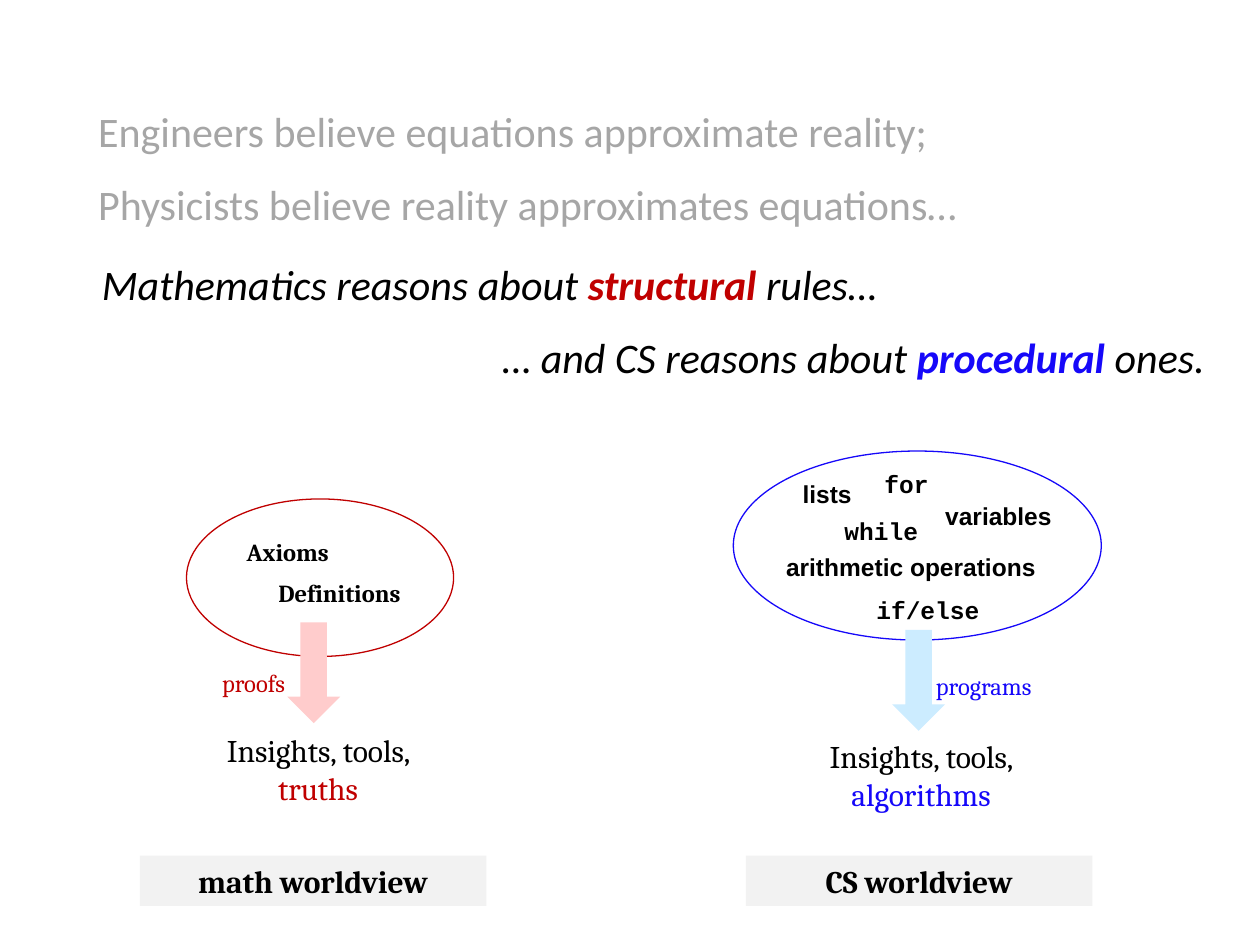
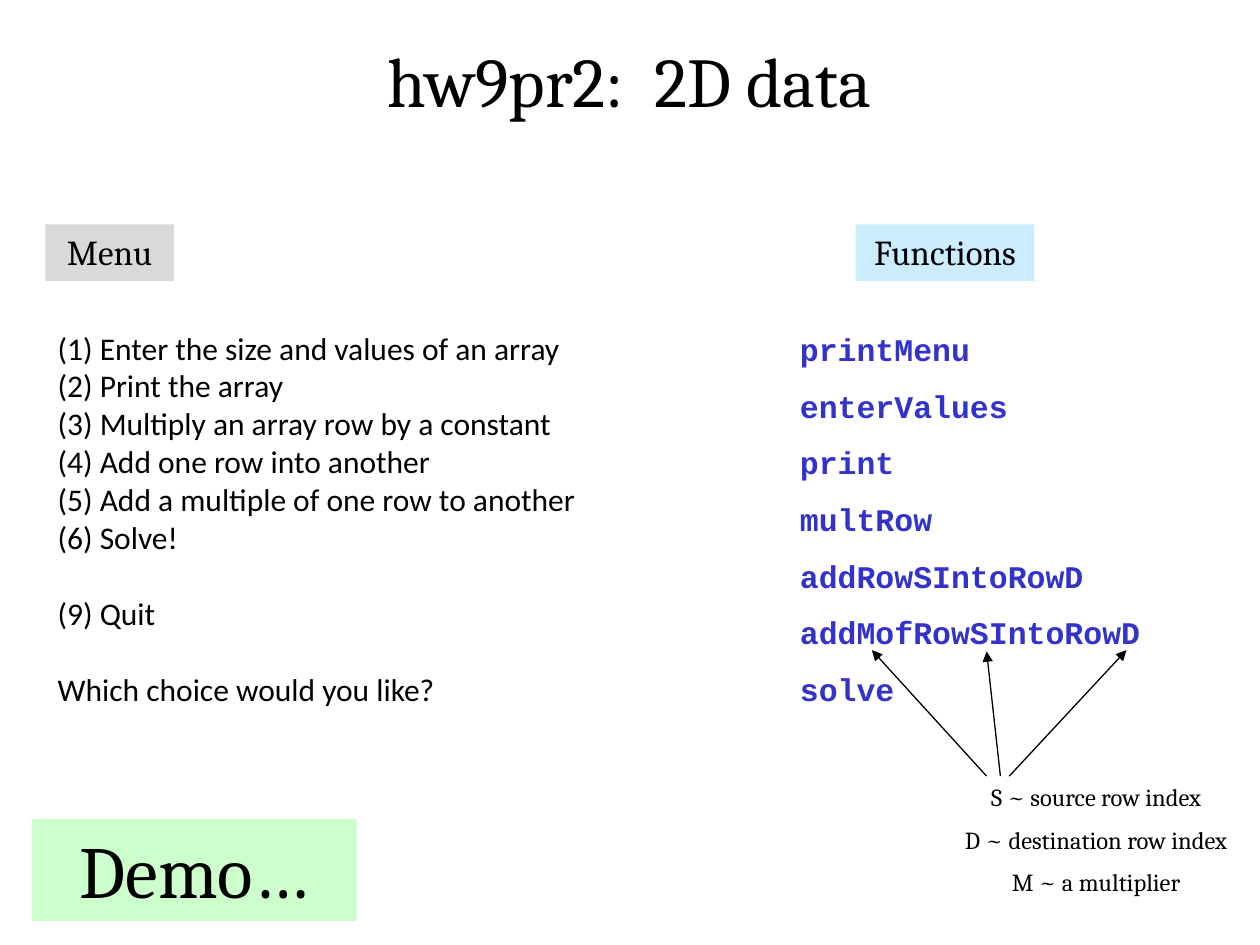
"""Build two lecture slides: the math and CS worldviews, and the hw9pr2 task."""
from lxml.etree import SubElement
from pptx import Presentation
from pptx.dml.color import RGBColor
from pptx.enum.shapes import MSO_CONNECTOR, MSO_SHAPE
from pptx.enum.text import MSO_ANCHOR, MSO_AUTO_SIZE, PP_ALIGN as ALIGN
from pptx.oxml.ns import qn
from pptx.util import Inches, Pt

BLACK = RGBColor(0x00, 0x00, 0x00)
MUTED = RGBColor(0xA6, 0xA6, 0xA6)
RED = RGBColor(0xC0, 0x00, 0x00)
BLUE = RGBColor(0x16, 0x08, 0xF9)
CODE_BLUE = RGBColor(0x33, 0x33, 0xCC)
PINK = RGBColor(0xFF, 0xCC, 0xCC)
SKY = RGBColor(0xCC, 0xEC, 0xFF)
PALE_GREY = RGBColor(0xF2, 0xF2, 0xF2)
GREY = RGBColor(0xD9, 0xD9, 0xD9)
GREEN = RGBColor(0xCC, 0xFF, 0xCC)

SANS, SERIF, MONO, ARIAL = "Calibri", "Cambria", "Courier New", "Arial"


def add_shape(page, kind, place, fill=None, line=None):
    """Add a preset shape with an optional fill and outline."""
    shape = page.shapes.add_shape(kind, *map(Inches, place))
    shape.shadow.inherit = False
    if fill is None:
        shape.fill.background()
    else:
        shape.fill.solid()
        shape.fill.fore_color.rgb = fill
    if line is None:
        shape.line.fill.background()
    else:
        shape.line.color.rgb = line
        shape.line.width = Pt(0.75)
    return shape


def add_text(page, place, paragraphs, size, font=SERIF, color=BLACK, bold=False,
             italic=False, align=ALIGN.CENTER, fill=None, wrap=True):
    """Add text, on a filled band if asked; a paragraph is a string or (text, accent) spans."""
    if fill is None:
        box = page.shapes.add_textbox(*map(Inches, place))
    else:
        box = add_shape(page, MSO_SHAPE.RECTANGLE, place, fill)
    frame = box.text_frame
    frame.word_wrap = wrap
    frame.auto_size = MSO_AUTO_SIZE.SHAPE_TO_FIT_TEXT
    frame.vertical_anchor = MSO_ANCHOR.TOP
    for index, spans in enumerate(paragraphs):
        para = frame.add_paragraph() if index else frame.paragraphs[0]
        para.alignment = align
        for text, accent in [(spans, None)] if isinstance(spans, str) else spans:
            span = para.add_run()
            span.text = text
            span.font.name = font
            span.font.size = Pt(size)
            span.font.italic = italic
            span.font.bold = bold or (italic and accent is not None)
            span.font.color.rgb = accent or color
    return frame


deck = Presentation()
deck.slide_width, deck.slide_height = Inches(10), Inches(7.5)
blank = deck.slide_layouts[6]

page = deck.slides.add_slide(blank)
beliefs = ["Engineers believe equations approximate reality;",
           "Physicists believe reality approximates equations…"]
for index, belief in enumerate(beliefs):
    add_text(page, (0.68, 0.79 + 0.58 * index, 7.99, 0.5), [belief], 24, SANS, MUTED,
             align=ALIGN.LEFT)

claims = [
    (0.71, 2.0, ALIGN.LEFT,
     [("Mathematics reasons about ", None), ("structural ", RED), ("rules…", None)]),
    (2.33, 2.58, ALIGN.RIGHT,
     [("… and CS reasons about ", None), ("procedural ", BLUE), ("ones.", None)]),
]
for left, top, align, spans in claims:
    add_text(page, (left, top, 7.33, 0.5), [spans], 24, SANS, italic=True, align=align)

worldviews = [
    (RED, PINK, (1.48, 3.96, 2.12, 1.25), (2.28, 4.94), "proofs", (0.93, 5.25), ALIGN.RIGHT,
     "truths", (1.39, 5.75, 2.27, 0.71), "math worldview", 1.11),
    (BLUE, SKY, (5.82, 3.58, 2.92, 1.5), (7.08, 5.0), "programs", (7.33, 5.28), ALIGN.LEFT,
     "algorithms", (5.95, 5.8, 2.72, 0.71), "CS worldview", 5.92),
]
for (color, tint, oval, arrow, means, means_at, means_align,
     result, result_place, name, name_left) in worldviews:
    add_shape(page, MSO_SHAPE.OVAL, oval, line=color)
    add_shape(page, MSO_SHAPE.DOWN_ARROW, (*arrow, 0.42, 0.8), tint)
    add_text(page, (*means_at, 1.43, 0.33), [means], 14, color=color, align=means_align)
    add_text(page, result_place, [[("Insights, tools, ", None), (result, color)]], 18)
    add_text(page, (name_left, 6.79, 2.75, 0.4), [name], 18, bold=True, fill=PALE_GREY)

ingredients = [
    ("Axioms", SERIF, 1.57, 4.21, 1.43), ("Definitions", SERIF, 1.98, 4.54, 1.43),
    ("if/else", MONO, 6.65, 4.67, 1.43), ("while", MONO, 6.28, 4.05, 1.43),
    ("for", MONO, 6.48, 3.67, 1.43), ("arithmetic operations", ARIAL, 5.98, 4.33, 2.5),
    ("variables", ARIAL, 7.21, 3.93, 1.43), ("lists", ARIAL, 6.15, 3.75, 0.83),
]
for word, font, left, top, width in ingredients:
    add_text(page, (left, top, width, 0.33), [word], 14, font, bold=True)

page = deck.slides.add_slide(blank)
add_text(page, (0.83, 0.25, 8.33, 0.77), ["hw9pr2:  2D data"], 40)
add_text(page, (0.36, 1.78, 1.02, 0.45), ["Menu"], 20, fill=GREY)
add_text(page, (6.79, 1.78, 1.42, 0.45), ["Functions"], 20, fill=SKY)
add_text(page, (0.25, 6.5, 2.58, 0.81), ["Demo…"], 42, fill=GREEN)

menu = ["(1) Enter the size and values of an array", "(2) Print the array",
        "(3) Multiply an array row by a constant", "(4) Add one row into another",
        "(5) Add a multiple of one row to another", "(6) Solve!", "(9) Quit",
        "Which choice would you like?"]
menu_frame = add_text(page, (0.36, 2.56, 4.36, 3.13), menu, 18, SANS,
                      align=ALIGN.LEFT, wrap=False)
for para in menu_frame.paragraphs[-2:]:
    para.space_before = Pt(22)

functions = ["printMenu", "enterValues", "print", "multRow", "addRowSIntoRowD",
             "addMofRowSIntoRowD", "solve"]
function_frame = add_text(page, (6.25, 2.42, 2.9, 3.26), functions, 18, MONO, CODE_BLUE,
                          bold=True, align=ALIGN.LEFT, wrap=False)
for para in function_frame.paragraphs:
    para.line_spacing = 1.5

legend = ["S ~ source row index", "D ~ destination row index", "M ~ a multiplier"]
legend_frame = add_text(page, (7.5, 6.16, 2.4, 1.04), legend, 14)
for para in legend_frame.paragraphs[1:]:
    para.space_before = Pt(7.5)

for start, end, tip in [(7.94, 7.83, 5.17), (8.01, 8.94, 5.16), (7.83, 6.92, 5.16)]:
    pointer = page.shapes.add_connector(MSO_CONNECTOR.STRAIGHT, Inches(start), Inches(6.16),
                                        Inches(end), Inches(tip))
    pointer.line.color.rgb = BLACK
    pointer.line.width = Pt(0.75)
    properties = pointer._element.spPr
    SubElement(properties.find(qn("a:ln")), qn("a:tailEnd"), type="triangle")
    SubElement(properties, qn("a:effectLst"))

deck.save("out.pptx")
